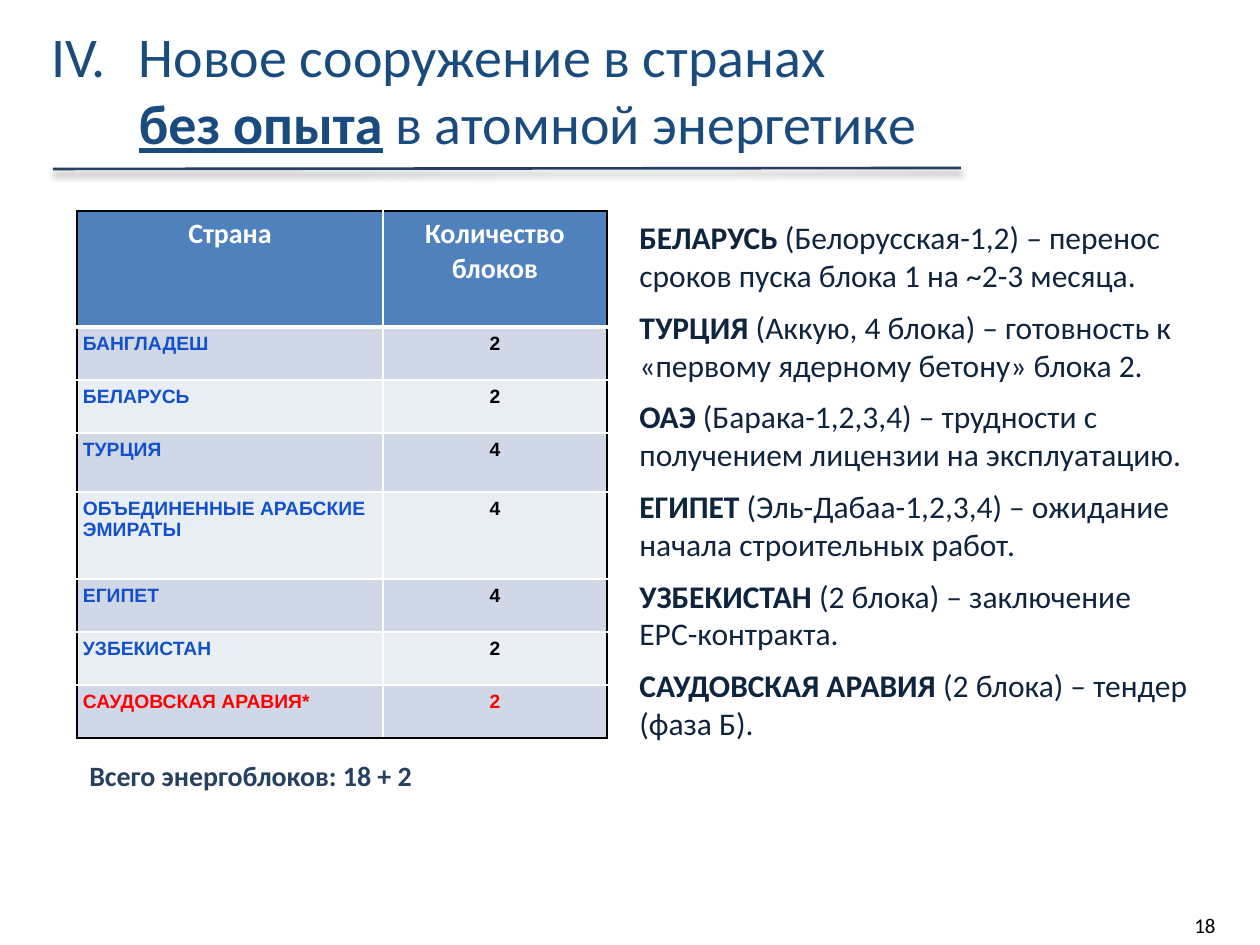
from dataclasses import dataclass
from lxml.etree import SubElement, fromstring
from pptx import Presentation
from pptx.dml.color import RGBColor as RGB
from pptx.enum.shapes import MSO_CONNECTOR as CONN
from pptx.enum.text import MSO_ANCHOR as ANCHOR, MSO_AUTO_SIZE as FIT, PP_ALIGN as AL
from pptx.oxml.ns import nsdecls, qn
from pptx.util import Emu, Pt


@dataclass(frozen=True)
class Theme:
    font: str = "Calibri"
    cell_font: str = "Arial"
    title: str = "1A4B7F"
    navy: str = "254061"
    body: str = "0F243E"
    header: str = "4F81BD"
    bands: tuple = ("D0D8E8", "E9EDF4")
    country: str = "1250CC"
    planned: str = "FF0000"
    white: str = "FFFFFF"
    black: str = "000000"
    title_size: int = 32
    body_size: int = 18
    label_size: int = 16
    cell_size: int = 11
    number_size: int = 12


T = Theme()
HEADERS = ("Страна", "Количество блоков")
COUNTRIES = (
    ("БАНГЛАДЕШ", 2, 53),
    ("БЕЛАРУСЬ", 2, 53),
    ("ТУРЦИЯ", 4, 59),
    ("ОБЪЕДИНЕННЫЕ АРАБСКИЕ ЭМИРАТЫ", 4, 87),
    ("ЕГИПЕТ", 4, 53),
    ("УЗБЕКИСТАН", 2, 53),
    ("САУДОВСКАЯ АРАВИЯ*", 2, 53),
)
NEWS = (
    ("БЕЛАРУСЬ", " (Белорусская-1,2) – перенос сроков пуска блока 1 на ~2-3 месяца."),
    ("ТУРЦИЯ", " (Аккую, 4 блока) – готовность к «первому ядерному бетону» блока 2."),
    ("ОАЭ", " (Барака-1,2,3,4) – трудности с получением лицензии на эксплуатацию."),
    ("ЕГИПЕТ", " (Эль-Дабаа-1,2,3,4) – ожидание начала строительных работ."),
    ("УЗБЕКИСТАН", " (2 блока) – заключение EPC-контракта."),
    ("САУДОВСКАЯ АРАВИЯ", " (2 блока) – тендер (фаза Б)."),
)


def px(n):
    return Emu(round(n * 914400 / 126))


def assign(obj, values):
    for name, value in values.items():
        setattr(obj, name, value)


def place(sp, left, top, width, height):
    assign(sp, {"left": px(left), "top": px(top), "width": px(width), "height": px(height)})


def add_run(p, text, size, color, font=T.font, **style):
    r = p.add_run()
    r.text = text
    assign(r.font, {"name": font, "size": Pt(size), **style})
    r.font.color.rgb = RGB.from_string(color)


def add_text(slide, box, wrap=True, **frame):
    tf = slide.shapes.add_textbox(*map(px, box)).text_frame
    assign(tf, {"word_wrap": wrap, **frame})
    return tf


def add_title(slide):
    sp = slide.shapes.title
    place(sp, 39, 24, 1007, 130)
    tf = sp.text_frame
    assign(tf, {"auto_size": FIT.NONE, "vertical_anchor": ANCHOR.MIDDLE})
    p = tf.paragraphs[0]
    p.alignment = AL.LEFT
    pPr = p._p.get_or_add_pPr()
    pPr.set("marL", str(px(87)))
    pPr.set("indent", str(-px(87)))
    SubElement(pPr, qn("a:buFont"), typeface=T.font)
    SubElement(pPr, qn("a:buAutoNum"), type="romanUcPeriod", startAt="4")
    look = (T.title_size, T.title)
    add_run(p, "Новое сооружение в странах", *look)
    p.add_line_break()
    add_run(p, "без опыта", *look, bold=True, underline=True)
    add_run(p, " в атомной энергетике", *look)


def add_rule(slide):
    c = slide.shapes.add_connector(CONN.STRAIGHT, px(53), px(169), px(961), px(168))
    c.line.width = Pt(1.5)
    c.line.color.rgb = RGB.from_string(T.navy)
    c._element.spPr.append(fromstring(
        f'<a:effectLst {nsdecls("a")}><a:outerShdw blurRad="{Pt(4)}" dist="{Pt(3)}" '
        f'dir="5400000" rotWithShape="0"><a:srgbClr val="{T.black}"><a:alpha val="40000"/>'
        '</a:srgbClr></a:outerShdw></a:effectLst>'))


def set_borders(cell, row, col, last_row, last_col):
    edges = (
        ("lnL", col == 0, 1),
        ("lnR", col == last_col, 1),
        ("lnT", row == 0, 3 if row == 1 else 1),
        ("lnB", row == last_row, 3 if row == 0 else 1),
    )
    tcPr = cell._tc.get_or_add_tcPr()
    for i, (tag, outer, width) in enumerate(edges):
        color = T.black if outer else T.white
        tcPr.insert(i, fromstring(
            f'<a:{tag} {nsdecls("a")} w="{Pt(width)}"><a:solidFill>'
            f'<a:srgbClr val="{color}"/></a:solidFill></a:{tag}>'))


def fill_cell(cell, text, fill, align, *look):
    cell.fill.solid()
    cell.fill.fore_color.rgb = RGB.from_string(fill)
    p = cell.text_frame.paragraphs[0]
    p.alignment = align
    add_run(p, text, *look, bold=True)


def add_country_table(slide):
    widths = (306, 224)
    heights = (116, *(height for _, _, height in COUNTRIES))
    box = (77, 211, sum(widths), sum(heights))
    table = slide.shapes.add_table(len(heights), len(widths), *map(px, box)).table
    for column, width in zip(table.columns, widths):
        column.width = px(width)
    for row, height in zip(table.rows, heights):
        row.height = px(height)
    for col, text in enumerate(HEADERS):
        fill_cell(table.cell(0, col), text, T.header, AL.CENTER, T.label_size, T.white)
    for row, (country, units, _) in enumerate(COUNTRIES, 1):
        planned = country.endswith("*")
        values = (
            (country, AL.LEFT, T.planned if planned else T.country),
            (str(units), AL.CENTER, T.planned if planned else T.black),
        )
        for col, (text, align, color) in enumerate(values):
            cell = table.cell(row, col)
            sides = ("left", "right", "top", "bottom")
            assign(cell, {f"margin_{side}": px(6) for side in sides})
            fill_cell(cell, text, T.bands[(row - 1) % 2], align,
                      T.cell_size, color, T.cell_font)
    for row in range(len(heights)):
        for col in range(len(widths)):
            set_borders(table.cell(row, col), row, col, len(heights) - 1, len(widths) - 1)


def add_news(slide):
    tf = add_text(slide, (627, 212, 577, 542), auto_size=FIT.SHAPE_TO_FIT_TEXT)
    for i, (country, text) in enumerate(NEWS):
        p = tf.add_paragraph() if i else tf.paragraphs[0]
        p.space_after = Pt(8)
        add_run(p, country, T.body_size, T.body, bold=True)
        add_run(p, text, T.body_size, T.body)


def add_total(slide):
    tf = add_text(slide, (77, 752, 365, 47), wrap=False, auto_size=FIT.SHAPE_TO_FIT_TEXT)
    add_run(tf.paragraphs[0], "Всего энергоблоков: 18 + 2", T.label_size, T.navy, bold=True)


def add_page_number(slide):
    tf = add_text(slide, (1125, 906, 103, 39), vertical_anchor=ANCHOR.MIDDLE)
    p = tf.paragraphs[0]
    p.alignment = AL.RIGHT
    add_run(p, "18", T.number_size, T.black)


def main():
    prs = Presentation()
    assign(prs, {"slide_width": px(1260), "slide_height": px(945)})
    slide = prs.slides.add_slide(prs.slide_layouts.get_by_name("Title Only"))
    add_rule(slide)
    add_page_number(slide)
    add_country_table(slide)
    add_total(slide)
    add_news(slide)
    add_title(slide)
    prs.save("out.pptx")


if __name__ == "__main__":
    main()
